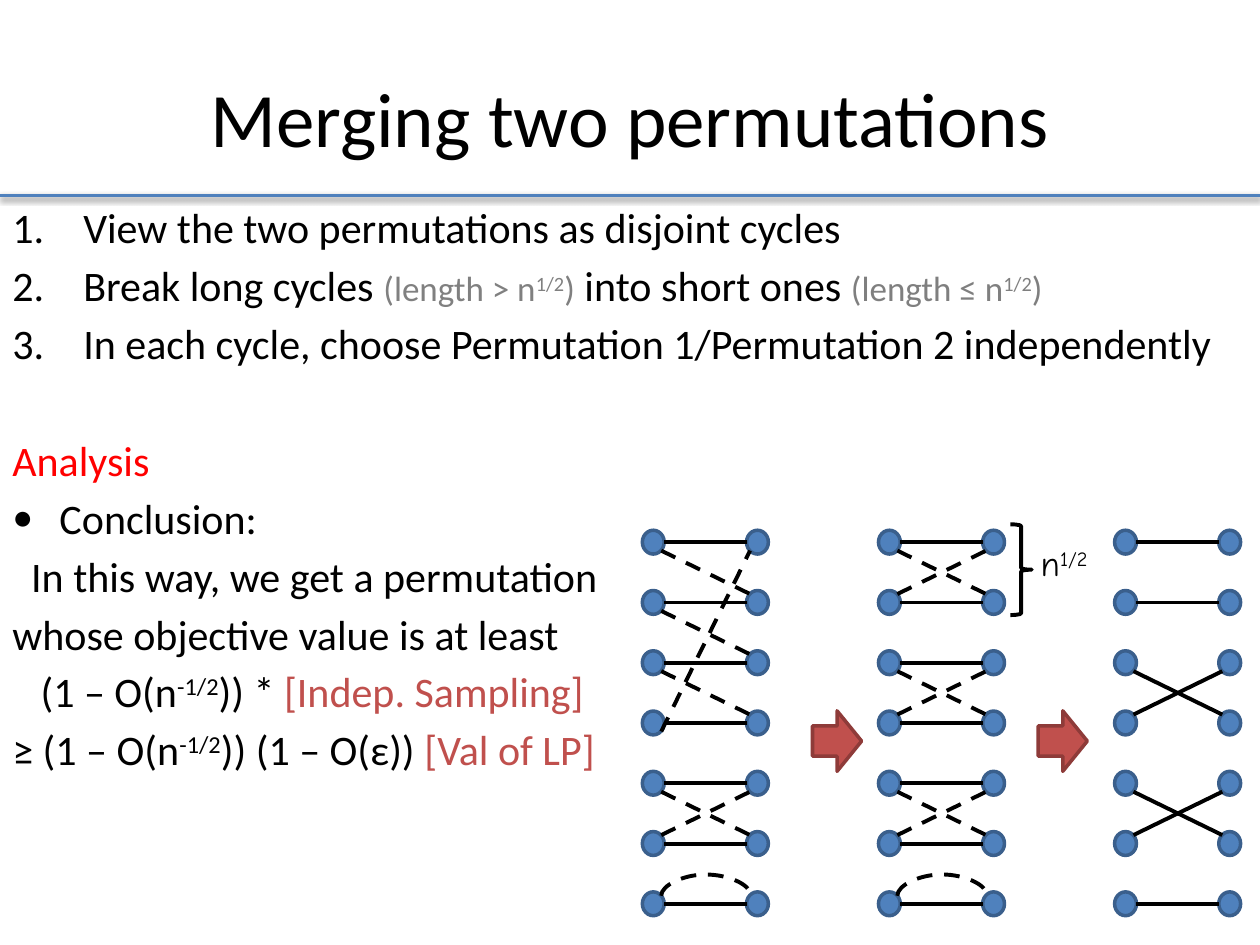
from lxml import etree
from pptx import Presentation
from pptx.dml.color import RGBColor
from pptx.enum.dml import MSO_LINE
from pptx.enum.shapes import MSO_CONNECTOR, MSO_SHAPE
from pptx.enum.text import MSO_ANCHOR, MSO_AUTO_SIZE, PP_ALIGN
from pptx.oxml.ns import qn
from pptx.util import Cm, Pt

STRAIGHT, CURVE = MSO_CONNECTOR.STRAIGHT, MSO_CONNECTOR.CURVE
DASH = MSO_LINE.DASH
OVAL, ARROW, BRACE = MSO_SHAPE.OVAL, MSO_SHAPE.RIGHT_ARROW, MSO_SHAPE.RIGHT_BRACE

COLORS = {
    "black": "000000", "red": "FF0000", "brick": "C0504D", "brick_edge": "8E3B39",
    "blue": "4F81BD", "blue_edge": "3A5F8C", "gray": "808080", "soft_gray": "7F7F7F",
}

# Grid of the matchings, in cm
ROWS = 7
FIRST_ROW, ROW_GAP = 10.93, 1.215
FIRST_COLUMN, COLUMN_GAP = 12.95, 4.76
NODE_WIDTH, NODE_HEIGHT, NODE_OFFSET = 0.44, 0.48, 2.1
CROSS_START, CROSS_END, CROSS_SHIFT = 0.38, 2.17, 0.17

# Edges as (left row, right row)
PAIRS = [(2, 3), (3, 2), (4, 5), (5, 4)]
MATCHINGS = [
    {"level": range(ROWS), "loop": True, "cross_dash": DASH,
     "cross": [(0, 1), (1, 2), (2, 3), (3, 0), (4, 5), (5, 4)]},
    {"level": range(ROWS), "loop": True, "cross_dash": DASH,
     "cross": [(0, 1), (1, 0)] + PAIRS},
    {"level": (0, 1, 6), "loop": False, "cross_dash": None, "cross": PAIRS},
]

# Spans are (text, changes to the format)
SUP = {"raised": True}
GRAY = {"size": 20, "color": "gray"}
SOFT = {"size": 20, "color": "soft_gray"}
BRICK = {"color": "brick"}
NUMBERED = {"bullet": ("buAutoNum", "type", "arabicPeriod"), "indent": 1.43}
DOTTED = {"bullet": ("buChar", "char", "•"), "indent": 0.95}
BODY = [
    (NUMBERED, [("View the two permutations as disjoint cycles", {})]),
    (NUMBERED, [("Break long cycles ", {}), ("(length > n", GRAY), ("1/2", GRAY | SUP),
                (")", GRAY), (" into short ones ", {}), ("(length ≤ n", SOFT),
                ("1/2", SOFT | SUP), (")", SOFT)]),
    (NUMBERED, [("In each cycle, choose Permutation 1/Permutation 2 independently", {})]),
    ({"before": 37.9}, [("Analysis", {"color": "red"})]),
    (DOTTED, [("Conclusion:", {})]),
    ({"first": 0.38}, [("In this way, we get a permutation", {})]),
    ({}, [("whose objective value is at least", {})]),
    ({"first": 0.57}, [("(1 – O(n", {}), ("-1/2", SUP), (")) * ", {}),
                       ("[Indep. Sampling]", BRICK)]),
    ({}, [("≥ (1 – O(n", {}), ("-1/2", SUP), (")) (1 – O(ε)) ", {}),
          ("[Val of LP]", BRICK)]),
]


def color(name):
    return RGBColor.from_string(COLORS[name])


def set_values(target, values):
    for name, value in values.items():
        setattr(target, name, value)


def add_span(para, text, size=24, font="Calibri", color_name="black", raised=False):
    span = para.add_run()
    span.text = text
    set_values(span.font, {"name": font, "size": Pt(size)})
    span.font.color.rgb = color(color_name)
    if raised:
        span._r.get_or_add_rPr().set("baseline", "30000")


def add_box(page, left, top, width, height, **frame_format):
    box = page.shapes.add_textbox(Cm(left), Cm(top), Cm(width), Cm(height))
    set_values(box.text_frame, {"word_wrap": True} | frame_format)
    return box.text_frame


def format_para(para, before=4.3, first=0, indent=0, bullet=None):
    para.space_before = Pt(before)
    props = para._p.get_or_add_pPr()
    props.set("marL", str(Cm(indent)))
    props.set("indent", str(Cm(first - indent)))
    if bullet:
        tag, key, value = bullet
        etree.SubElement(props, qn("a:buFont")).set("typeface", "Calibri")
        etree.SubElement(props, qn("a:" + tag)).set(key, value)


def add_body(page):
    frame = add_box(page, 0, 3.94, 25.4, 15.11)
    for index, (para_format, spans) in enumerate(BODY):
        para = frame.add_paragraph() if index else frame.paragraphs[0]
        format_para(para, **para_format)
        for text, changes in spans:
            values = dict(changes)
            add_span(para, text, color_name=values.pop("color", "black"), **values)


def add_solid(shapes, kind, left, top, width, height, fill, edge, line_width=2):
    shape = shapes.add_shape(kind, Cm(left), Cm(top), Cm(width), Cm(height))
    shape.shadow.inherit = False
    if fill:
        shape.fill.solid()
        shape.fill.fore_color.rgb = color(fill)
    else:
        shape.fill.background()
    shape.line.color.rgb = color(edge)
    shape.line.width = Pt(line_width)


def add_line(shapes, start, end, kind=STRAIGHT, dash=None, color_name="black", width=2.25):
    line = shapes.add_connector(kind, *[Cm(value) for value in (*start, *end)])
    line.line.color.rgb = color(color_name)
    set_values(line.line, {"width": Pt(width), "dash_style": dash})
    effects = etree.SubElement(line._element.spPr, qn("a:effectLst"))
    return line, effects


def add_header_rule(page):
    _, effects = add_line(page.shapes, (0, 3.94), (25.4, 3.94), color_name="blue", width=2)
    shadow = etree.SubElement(effects, qn("a:outerShdw"), blurRad="40000", dist="20000",
                              dir="5400000", rotWithShape="0")
    tint = etree.SubElement(shadow, qn("a:srgbClr"), val=COLORS["black"])
    etree.SubElement(tint, qn("a:alpha"), val="38000")


def add_loop(shapes, center_x, center_y):
    # A thin connector turned upright, bulging far above its ends
    line, _ = add_line(shapes, (center_x + 0.01, center_y + 0.9),
                       (center_x - 0.01, center_y - 0.9), kind=CURVE, dash=DASH)
    props = line._element.spPr
    props.find(qn("a:xfrm")).set("rot", "5400000")
    guides = props.find(qn("a:prstGeom")).find(qn("a:avLst"))
    etree.SubElement(guides, qn("a:gd"), name="adj1", fmla="val 2150000")


def add_matching(page, left, level, cross, cross_dash, loop):
    shapes = page.shapes.add_group_shape().shapes
    centers = [FIRST_ROW + row * ROW_GAP for row in range(ROWS)]
    for y in centers:
        for x in (left, left + NODE_OFFSET):
            add_solid(shapes, OVAL, x, y - NODE_HEIGHT / 2, NODE_WIDTH, NODE_HEIGHT,
                      "blue", "blue_edge")
    for row in level:
        add_line(shapes, (left + NODE_WIDTH, centers[row]),
                 (left + NODE_OFFSET, centers[row]))
    for begin, end in cross:
        # The long closing edge leaves its node from below
        start_shift = CROSS_SHIFT if end > begin or begin - end > 1 else -CROSS_SHIFT
        end_shift = -CROSS_SHIFT if end > begin else CROSS_SHIFT
        add_line(shapes, (left + CROSS_START, centers[begin] + start_shift),
                 (left + CROSS_END, centers[end] + end_shift), dash=cross_dash)
    if loop:
        add_loop(shapes, left + 1.28, centers[-1] - CROSS_SHIFT)


def main():
    deck = Presentation()
    set_values(deck, {"slide_width": Cm(25.4), "slide_height": Cm(19.05)})
    page = deck.slides.add_slide(deck.slide_layouts[6])

    # Heading and text
    add_header_rule(page)
    title = add_box(page, 1.27, 0.76, 22.86, 3.18, vertical_anchor=MSO_ANCHOR.MIDDLE)
    title.paragraphs[0].alignment = PP_ALIGN.CENTER
    add_span(title.paragraphs[0], "Merging two permutations", size=44)
    add_body(page)

    # Matchings and the arrows between them
    for index, matching in enumerate(MATCHINGS):
        add_matching(page, FIRST_COLUMN + index * COLUMN_GAP, **matching)
    for left in (16.38, 20.93):
        add_solid(page.shapes, ARROW, left, 14.33, 0.99, 1.22, "brick", "brick_edge")

    # Cycle length
    add_solid(page.shapes, BRACE, 20.37, 10.57, 0.43, 1.83, None, "black", 2.25)
    label = add_box(page, 20.73, 10.8, 1.63, 1.12, word_wrap=False,
                    auto_size=MSO_AUTO_SIZE.SHAPE_TO_FIT_TEXT)
    for text, raised in (("n", False), ("1/2", True)):
        add_span(label.paragraphs[0], text, size=20, font="Comic Neue", raised=raised)

    deck.save("out.pptx")


if __name__ == "__main__":
    main()
